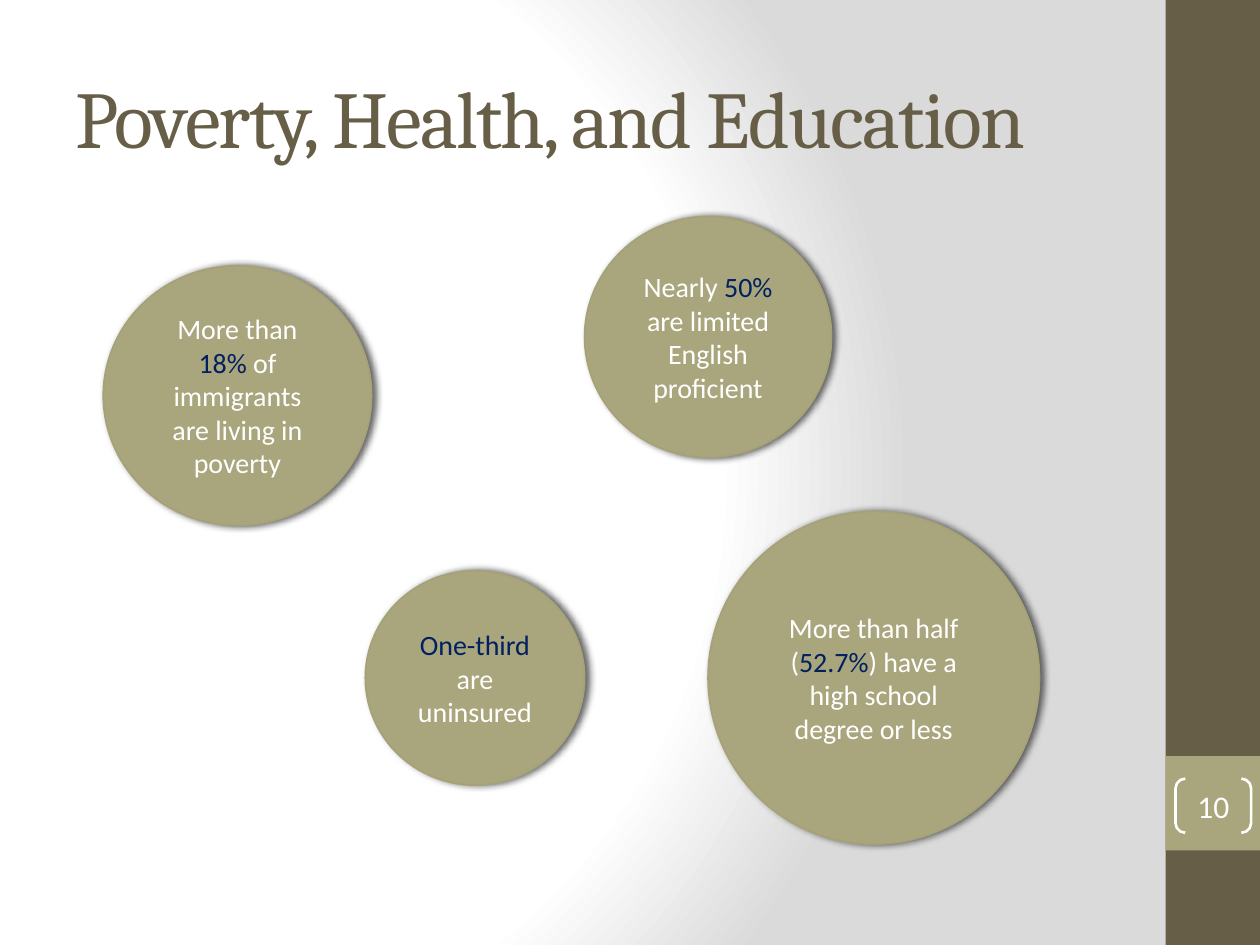
from typing import NamedTuple

from pptx import Presentation
from pptx.dml.color import RGBColor
from pptx.enum.shapes import MSO_SHAPE
from pptx.enum.text import MSO_ANCHOR, PP_ALIGN
from pptx.oxml import parse_xml
from pptx.oxml.ns import nsdecls, qn
from pptx.util import Inches, Pt

RECTANGLE = MSO_SHAPE.RECTANGLE
ELLIPSE = MSO_SHAPE.OVAL
BRACKETS = MSO_SHAPE.DOUBLE_BRACKET
MIDDLE = MSO_ANCHOR.MIDDLE
CENTER = PP_ALIGN.CENTER

SLIDE_WIDTH = Inches(10)
SLIDE_HEIGHT = Inches(7.5)
BROWN, OLIVE, OLIVE_EDGE = "675E47", "A9A57C", "A6A278"
WHITE, NAVY, GRAY = "FFFFFF", "002060", "DADADA"
BODY_FONT, TITLE_FONT = "Calibri", "Cambria"


class Area(NamedTuple):
    left: float
    top: float
    width: float
    height: float


class Words(NamedTuple):
    text: str
    color: str = WHITE


class Bubble(NamedTuple):
    area: Area
    paragraphs: list[list[Words]]


BUBBLES = [
    Bubble(Area(8.2, 28.13, 21.3, 27.47), [
        [Words("More than")],
        [Words("18% ", NAVY), Words("of immigrants are living in poverty")],
    ]),
    Bubble(Area(29, 60.4, 17.4, 22.67), [
        [Words("One-third ", NAVY), Words("are uninsured")],
    ]),
    Bubble(Area(56.2, 54.13, 26.3, 35.2), [
        [Words("More than half ("), Words("52.7%", NAVY),
         Words(") have a high school degree or less")],
    ]),
    Bubble(Area(46.4, 22.93, 19.6, 25.47), [
        [Words("Nearly "), Words("50% ", NAVY),
         Words("are limited English proficient")],
    ]),
]


def rgb(color: str) -> RGBColor:
    return RGBColor.from_string(color)


def place(area: Area) -> tuple[int, int, int, int]:
    return (
        round(SLIDE_WIDTH * area.left / 100),
        round(SLIDE_HEIGHT * area.top / 100),
        round(SLIDE_WIDTH * area.width / 100),
        round(SLIDE_HEIGHT * area.height / 100),
    )


def paint_background(slide) -> None:
    slide.background.fill.gradient()
    gradient = slide.element.find(".//" + qn("a:gradFill"))
    stops = "".join(
        f'<a:gs pos="{share * 1000}"><a:srgbClr val="{color}"/></a:gs>'
        for share, color in ((0, WHITE), (75, WHITE), (100, GRAY))
    )
    gradient.getparent().replace(gradient, parse_xml(
        f'<a:gradFill {nsdecls("a")} rotWithShape="1"><a:gsLst>{stops}</a:gsLst>'
        '<a:path path="circle"><a:fillToRect l="20000" t="50000" '
        'r="100000" b="50000"/></a:path></a:gradFill>'
    ))


def add_shape(slide, kind, area: Area, fill: str = "",
              line: str = "", line_width: float = 1):
    shape = slide.shapes.add_shape(kind, *place(area))
    shape.shadow.inherit = False
    if fill:
        shape.fill.solid()
        shape.fill.fore_color.rgb = rgb(fill)
    else:
        shape.fill.background()
    if line:
        shape.line.color.rgb = rgb(line)
        shape.line.width = Pt(line_width)
    else:
        shape.line.fill.background()
    return shape


def write(shape, paragraphs: list[list[Words]], size: float,
          font: str = BODY_FONT, align=CENTER) -> None:
    frame = shape.text_frame
    frame.word_wrap = True
    frame.vertical_anchor = MIDDLE
    for index, words in enumerate(paragraphs):
        paragraph = frame.add_paragraph() if index else frame.paragraphs[0]
        paragraph.alignment = align
        paragraph.font.size = Pt(size)
        paragraph.font.name = font
        for part in words:
            run = paragraph.add_run()
            run.text = part.text
            run.font.color.rgb = rgb(part.color)


def add_title(slide, text: str) -> None:
    title = slide.shapes.add_textbox(*place(Area(5, 4, 83.3, 16.67)))
    write(title, [[Words(text, BROWN)]], 46, TITLE_FONT, None)
    run = title.text_frame.paragraphs[0].runs[0]
    run.font._element.set("spc", "-100")


def add_page_number(slide, number: str) -> None:
    brackets = add_shape(slide, BRACKETS, Area(93.3, 82.4, 6, 5.73),
                         line=WHITE, line_width=1.5)
    brackets.adjustments[0] = 0.18
    frame = brackets.text_frame
    frame.margin_left = frame.margin_right = 0
    frame.margin_top = frame.margin_bottom = 0
    write(brackets, [[Words(number)]], 18)


def add_bubble(slide, bubble: Bubble) -> None:
    shape = add_shape(slide, ELLIPSE, bubble.area, OLIVE, OLIVE_EDGE)
    effects = shape.element.spPr.find(qn("a:effectLst"))
    effects.append(parse_xml(
        f'<a:outerShdw {nsdecls("a")} blurRad="{Pt(4)}" dist="{Pt(2)}" dir="0" '
        'rotWithShape="0"><a:srgbClr val="000000"><a:alpha val="60000"/>'
        '</a:srgbClr></a:outerShdw>'
    ))
    write(shape, bubble.paragraphs, 16)


def main() -> None:
    presentation = Presentation()
    presentation.slide_width = SLIDE_WIDTH
    presentation.slide_height = SLIDE_HEIGHT
    slide = presentation.slides.add_slide(presentation.slide_layouts[6])
    paint_background(slide)
    add_shape(slide, RECTANGLE, Area(92.5, 0, 7.5, 100), BROWN)
    add_shape(slide, RECTANGLE, Area(92.5, 80, 7.5, 10), OLIVE)
    add_title(slide, "Poverty, Health, and Education")
    add_page_number(slide, "10")
    for bubble in BUBBLES:
        add_bubble(slide, bubble)
    presentation.save("out.pptx")


if __name__ == "__main__":
    main()
